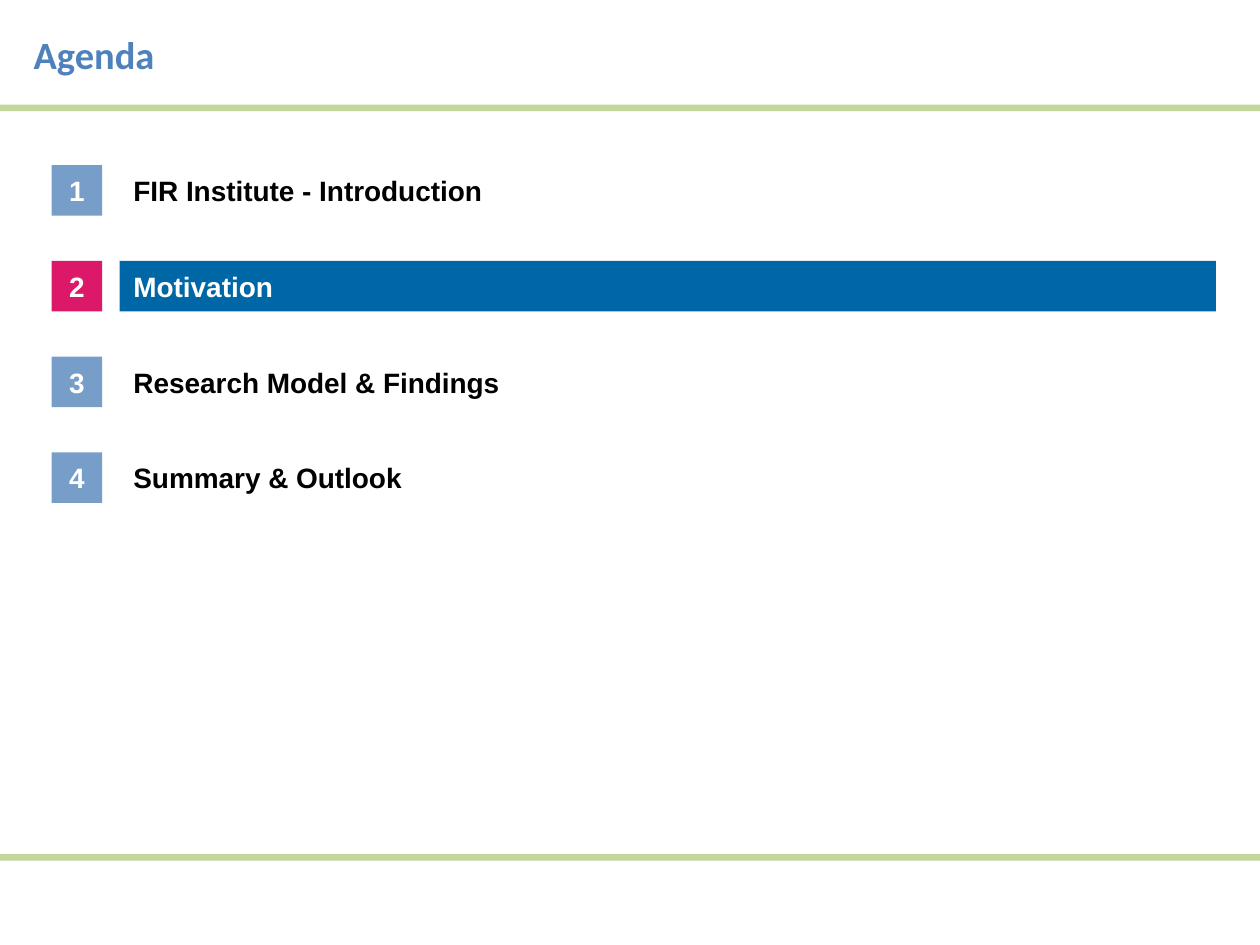
from pptx import Presentation
from pptx.dml.color import RGBColor
from pptx.enum import shapes, text
from pptx.util import Cm, Pt

WHITE = RGBColor(0xFF, 0xFF, 0xFF)
BLACK = RGBColor(0x00, 0x00, 0x00)
TITLE_BLUE = RGBColor(0x4F, 0x81, 0xBD)
RULE_GREEN = RGBColor(0xC3, 0xD6, 0x9B)
BAR_BLUE = RGBColor(0x00, 0x67, 0xA6)
NUMBER_BLUE = RGBColor(0x77, 0x9E, 0xC9)
CURRENT_PINK = RGBColor(0xDC, 0x19, 0x69)

TOPICS = [
    "FIR Institute - Introduction",
    "Motivation",
    "Research Model & Findings",
    "Summary & Outlook",
]
CURRENT = 2
ROW_HEIGHT = Cm(1.02)
ROW_PITCH = Cm(1.93)
TOPIC_OFFSET = Cm(1.37)

TITLE_FONT = {"name": "Calibri", "size": Pt(22), "bold": True}
AGENDA_FONT = {"name": "Arial", "size": Pt(16), "bold": True}


def add_block(slide, box, fill=None):
    """Add a filled rectangle, or a plain text box when there is no fill."""
    if fill is None:
        return slide.shapes.add_textbox(*box)
    block = slide.shapes.add_shape(shapes.MSO_SHAPE.RECTANGLE, *box)
    block.shadow.inherit = False
    block.fill.solid()
    block.fill.fore_color.rgb = fill
    block.line.fill.background()
    return block


def write(block, wording, font, color, side_inset, align=text.PP_ALIGN.LEFT):
    frame = block.text_frame
    frame_format = {
        "word_wrap": True,
        "vertical_anchor": text.MSO_ANCHOR.MIDDLE,
        "margin_left": side_inset,
        "margin_right": side_inset,
        "margin_top": 0,
        "margin_bottom": 0,
    }
    for key, value in frame_format.items():
        setattr(frame, key, value)
    paragraph = frame.paragraphs[0]
    paragraph.alignment = align
    run = paragraph.add_run()
    run.text = wording
    for key, value in font.items():
        setattr(run.font, key, value)
    run.font.color.rgb = color


def add_rules(slide, width):
    for top in (Cm(17.22), Cm(2.11)):
        add_block(slide, (0, top, width, Cm(0.13)), RULE_GREEN)


def add_title(slide, box):
    write(add_block(slide, box), "Agenda", TITLE_FONT, TITLE_BLUE, Cm(0.25))


def add_agenda_row(slide, box, number, topic):
    left, top, width, height = box
    is_current = number == CURRENT
    topic_box = (left + TOPIC_OFFSET, top, width - TOPIC_OFFSET, height)
    topic_bar = add_block(slide, topic_box, BAR_BLUE if is_current else None)
    write(topic_bar, topic, AGENDA_FONT, WHITE if is_current else BLACK, Cm(0.28))

    number_tile = add_block(slide, (left, top, height, height),
                            CURRENT_PINK if is_current else NUMBER_BLUE)
    write(number_tile, str(number), AGENDA_FONT, WHITE, 0, text.PP_ALIGN.CENTER)


def add_agenda(slide, left, top, width):
    for index, topic in enumerate(TOPICS):
        row_box = (left, top + index * ROW_PITCH, width, ROW_HEIGHT)
        add_agenda_row(slide, row_box, index + 1, topic)


def main():
    prs = Presentation()
    prs.slide_width, prs.slide_height = Cm(25.4), Cm(19.05)
    slide = prs.slides.add_slide(prs.slide_layouts[6])
    add_rules(slide, prs.slide_width)
    add_title(slide, (Cm(0.43), Cm(0.03), Cm(24.56), Cm(2.13)))
    add_agenda(slide, Cm(1.04), Cm(3.33), Cm(23.47))
    prs.save("out.pptx")


if __name__ == "__main__":
    main()
